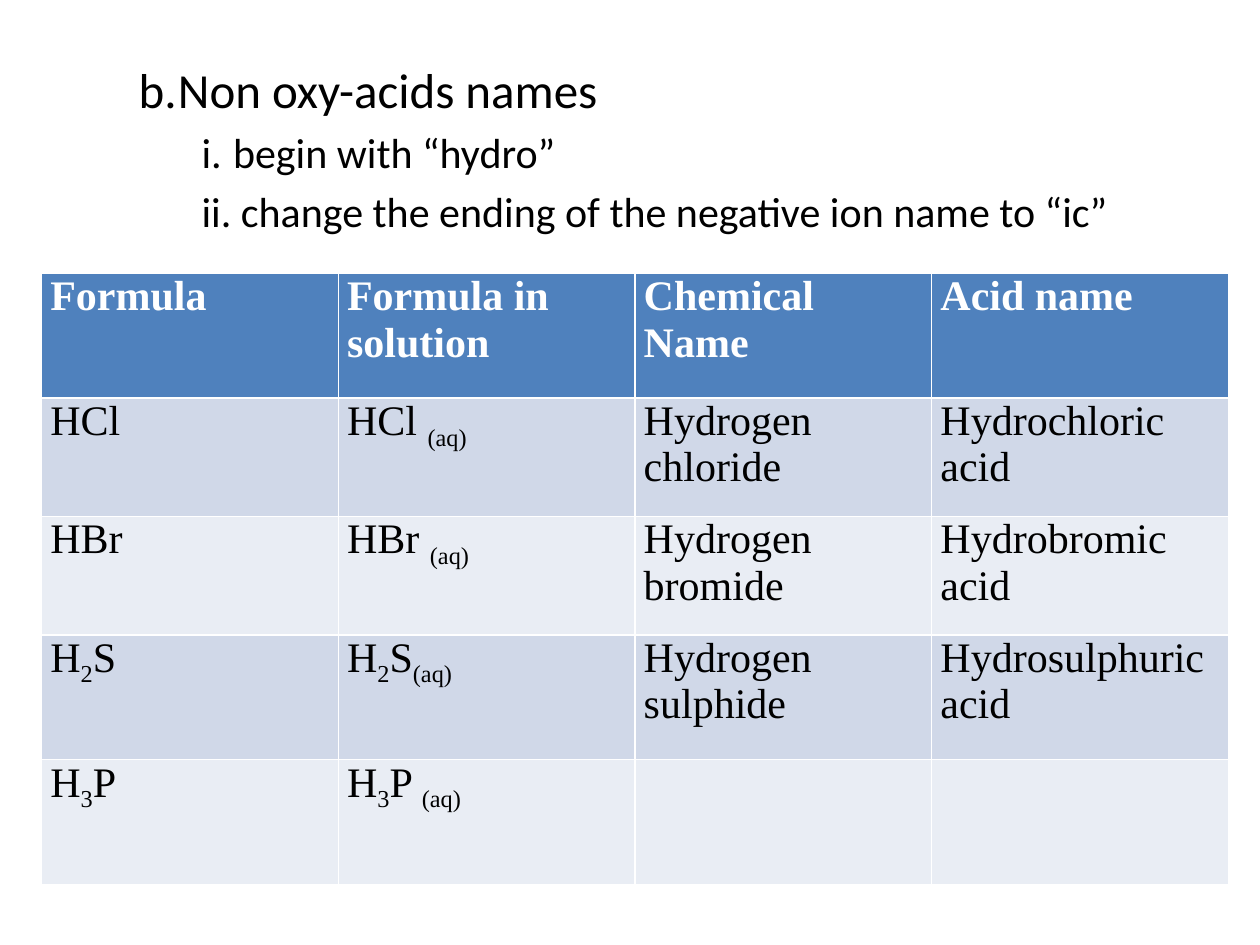
from lxml.etree import SubElement
from pptx import Presentation
from pptx.dml.color import RGBColor
from pptx.enum.text import MSO_AUTO_SIZE
from pptx.oxml.ns import qn
from pptx.util import Inches, Pt

BLACK = RGBColor(0x00, 0x00, 0x00)
WHITE = RGBColor(0xFF, 0xFF, 0xFF)
HEADER_BLUE = RGBColor(0x4F, 0x81, 0xBD)
BANDS = [RGBColor(0xE9, 0xED, 0xF4), RGBColor(0xD0, 0xD8, 0xE8)]

# (level, text)
NAMING_RULES = [
    (1, "b.\tNon oxy-acids names"),
    (2, "i.\tbegin with “hydro”"),
    (2, "ii. change the ending of the negative ion name to “ic”"),
]

# Text between underscores is subscript
ACIDS = [
    ["Formula", "Formula in solution", "Chemical Name", "Acid name"],
    ["HCl", "HCl _(aq)_", "Hydrogen chloride", "Hydrochloric acid"],
    ["HBr", "HBr _(aq)_", "Hydrogen bromide", "Hydrobromic acid"],
    ["H_2_S", "H_2_S_(aq)_", "Hydrogen sulphide", "Hydrosulphuric acid"],
    ["H_3_P", "H_3_P _(aq)_", "", ""],
]
ROW_HEIGHTS = [0.99, 0.94, 0.94, 0.99, 0.99]


class SlideBuilder:
    list_font = "Calibri"
    table_font = "Times New Roman"
    list_sizes = {1: 28, 2: 24}
    table_size = 24

    def __init__(self, prs):
        self.s = prs.slides.add_slide(prs.slide_layouts[1])
        title = self.s.shapes.title.element
        title.getparent().remove(title)

    def style(self, font, name, size, color, bold=False):
        font.name, font.size, font.bold = name, Pt(size), bold
        font.color.rgb = color

    def body(self, items, left, top, width, height):
        sp = self.s.placeholders[1]
        sp.left, sp.top = Inches(left), Inches(top)
        sp.width, sp.height = Inches(width), Inches(height)
        tf = sp.text_frame
        tf.auto_size = MSO_AUTO_SIZE.NONE
        for i, (level, text) in enumerate(items):
            p = tf.add_paragraph() if i else tf.paragraphs[0]
            p.level = level
            p.add_run().text = text
            # The numbering is typed, so the template's bullet is turned off
            SubElement(p._p.get_or_add_pPr(), qn("a:buNone"))
            self.style(p.font, self.list_font, self.list_sizes[level], BLACK)

    def table(self, rows, heights, left, top, width):
        table = self.s.shapes.add_table(
            len(rows), len(rows[0]), Inches(left), Inches(top),
            Inches(width), Inches(sum(heights))).table
        for r, (texts, height) in enumerate(zip(rows, heights)):
            table.rows[r].height = Inches(height)
            for c, text in enumerate(texts):
                self.cell(table.cell(r, c), text, r)

    def cell(self, cell, text, row):
        header = row == 0
        cell.fill.solid()
        cell.fill.fore_color.rgb = HEADER_BLUE if header else BANDS[row % 2]
        cell.margin_left = cell.margin_right = Inches(0.07)
        cell.margin_top = cell.margin_bottom = 0
        p = cell.text_frame.paragraphs[0]
        self.style(p.font, self.table_font, self.table_size,
                   WHITE if header else BLACK, header)
        for i, part in enumerate(text.split("_")):
            if part:
                r = p.add_run()
                r.text = part
                if i % 2:
                    r._r.get_or_add_rPr().set("baseline", "-25000")


def main():
    prs = Presentation()
    prs.slide_width, prs.slide_height = Inches(10), Inches(7.5)
    slide = SlideBuilder(prs)

    # Naming rules
    slide.body(NAMING_RULES, 0.5, 0.42, 9, 1.58)

    # Table of acids
    slide.table(ACIDS, ROW_HEIGHTS, 0.33, 2.17, 9.42)

    prs.save("out.pptx")


if __name__ == "__main__":
    main()
